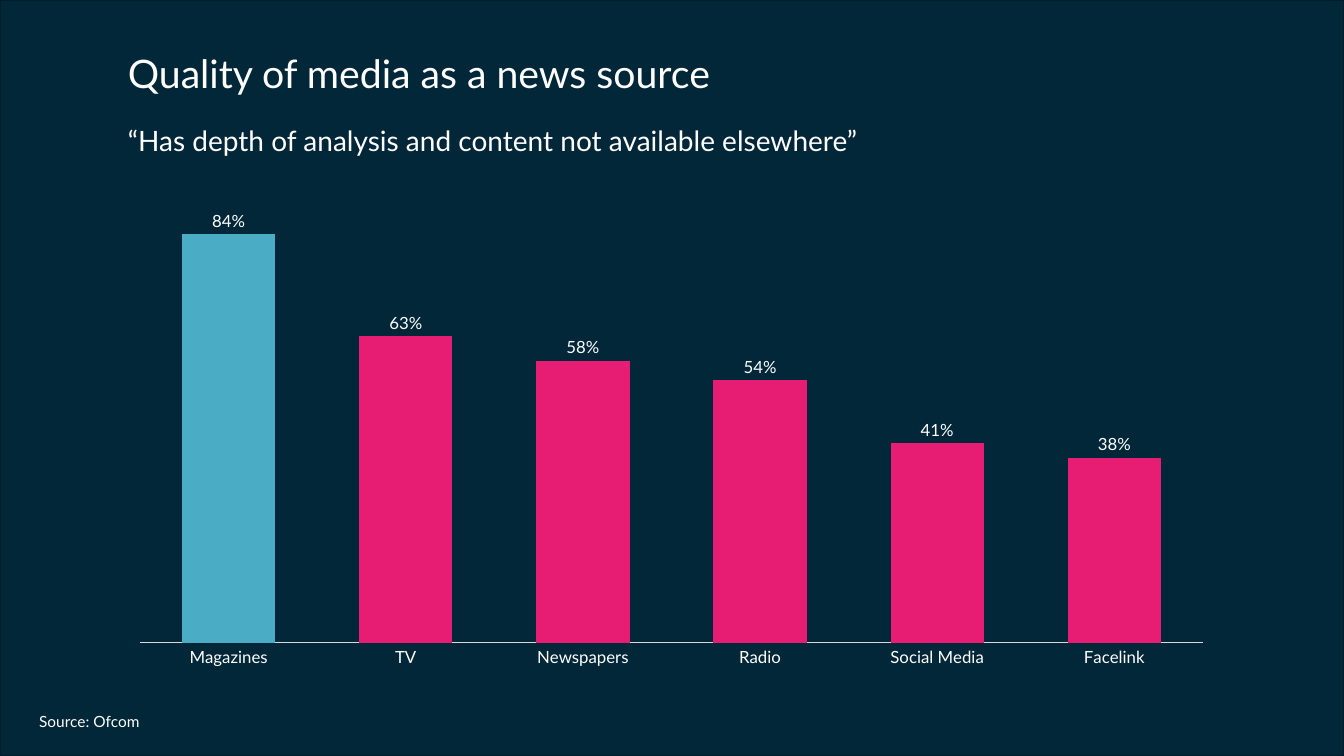
import pptx
import pptx.util
import pptx.chart.data
import pptx.dml.color
import pptx.enum.chart
import pptx.enum.shapes
import pptx.enum.text

Inches = pptx.util.Inches
Pt = pptx.util.Pt
RGBColor = pptx.dml.color.RGBColor

NAVY = RGBColor(0x02, 0x27, 0x38)
NAVY_EDGE = RGBColor(0x01, 0x1D, 0x29)
WHITE = RGBColor(0xFF, 0xFF, 0xFF)
AXIS_GREY = RGBColor(0xD9, 0xD9, 0xD9)
PINK = RGBColor(0xE6, 0x1D, 0x72)
TEAL = RGBColor(0x4B, 0xAC, 0xC6)
FONT = "Lato"


def style_font(font, size):
    font.name = FONT
    font.size = Pt(size)
    font.color.rgb = WHITE


prs = pptx.Presentation()
prs.slide_width = Inches(13.33)
prs.slide_height = Inches(7.5)
s = prs.slides.add_slide(prs.slide_layouts[6])

# Dark backdrop
backdrop = s.shapes.add_shape(
    pptx.enum.shapes.MSO_SHAPE.RECTANGLE, 0, 0, prs.slide_width, prs.slide_height)
backdrop.shadow.inherit = False
backdrop.fill.solid()
backdrop.fill.fore_color.rgb = NAVY
backdrop.line.color.rgb = NAVY_EDGE
backdrop.line.width = Pt(1)

# Title, subtitle and source line
MIDDLE = pptx.enum.text.MSO_ANCHOR.MIDDLE
BOTTOM = pptx.enum.text.MSO_ANCHOR.BOTTOM
texts = [
    ("Quality of media as a news source", 28, 1.17, 0.42, 11.67, 0.59, BOTTOM),
    ("“Has depth of analysis and content not available elsewhere”",
     20, 1.17, 1.02, 11.67, 0.59, BOTTOM),
    ("Source: Ofcom", 11, 0.29, 7.03, 10.4, 0.28, MIDDLE),
]
for text, size, left, top, width, height, anchor in texts:
    sp = s.shapes.add_textbox(Inches(left), Inches(top), Inches(width), Inches(height))
    tf = sp.text_frame
    tf.word_wrap = True
    tf.vertical_anchor = anchor
    p = tf.paragraphs[0]
    p.line_spacing = 0.9
    r = p.add_run()
    r.text = text
    style_font(r.font, size)

# Column chart
data = pptx.chart.data.CategoryChartData(number_format="0%")
data.categories = ["Magazines", "TV", "Newspapers", "Radio", "Social Media", "Facelink"]
data.add_series("Series 1", [0.84, 0.63, 0.58, 0.54, 0.41, 0.38])
chart = s.shapes.add_chart(
    pptx.enum.chart.XL_CHART_TYPE.COLUMN_CLUSTERED,
    Inches(1.17), Inches(1.94), Inches(10.98), Inches(4.77), data).chart
chart.has_legend = False
chart.has_title = False
style_font(chart.font, 12)

# Axes
category_axis = chart.category_axis
category_axis.major_tick_mark = pptx.enum.chart.XL_TICK_MARK.NONE
category_axis.format.line.color.rgb = AXIS_GREY
category_axis.format.line.width = Pt(0.75)
style_font(category_axis.tick_labels.font, 12)
value_axis = chart.value_axis
value_axis.visible = False
value_axis.has_major_gridlines = False
value_axis.minimum_scale = 0
value_axis.maximum_scale = 0.9

# Columns, with the leader highlighted
plot = chart.plots[0]
plot.vary_by_categories = False
plot.gap_width = 90
plot.overlap = -27
series = plot.series[0]
for fill, color in ((series.format.fill, PINK), (series.points[0].format.fill, TEAL)):
    fill.solid()
    fill.fore_color.rgb = color

# Value labels
labels = series.data_labels
labels.show_value = True
labels.number_format = "0%"
labels.number_format_is_linked = False
labels.position = pptx.enum.chart.XL_LABEL_POSITION.OUTSIDE_END
style_font(labels.font, 12)

prs.save("out.pptx")
